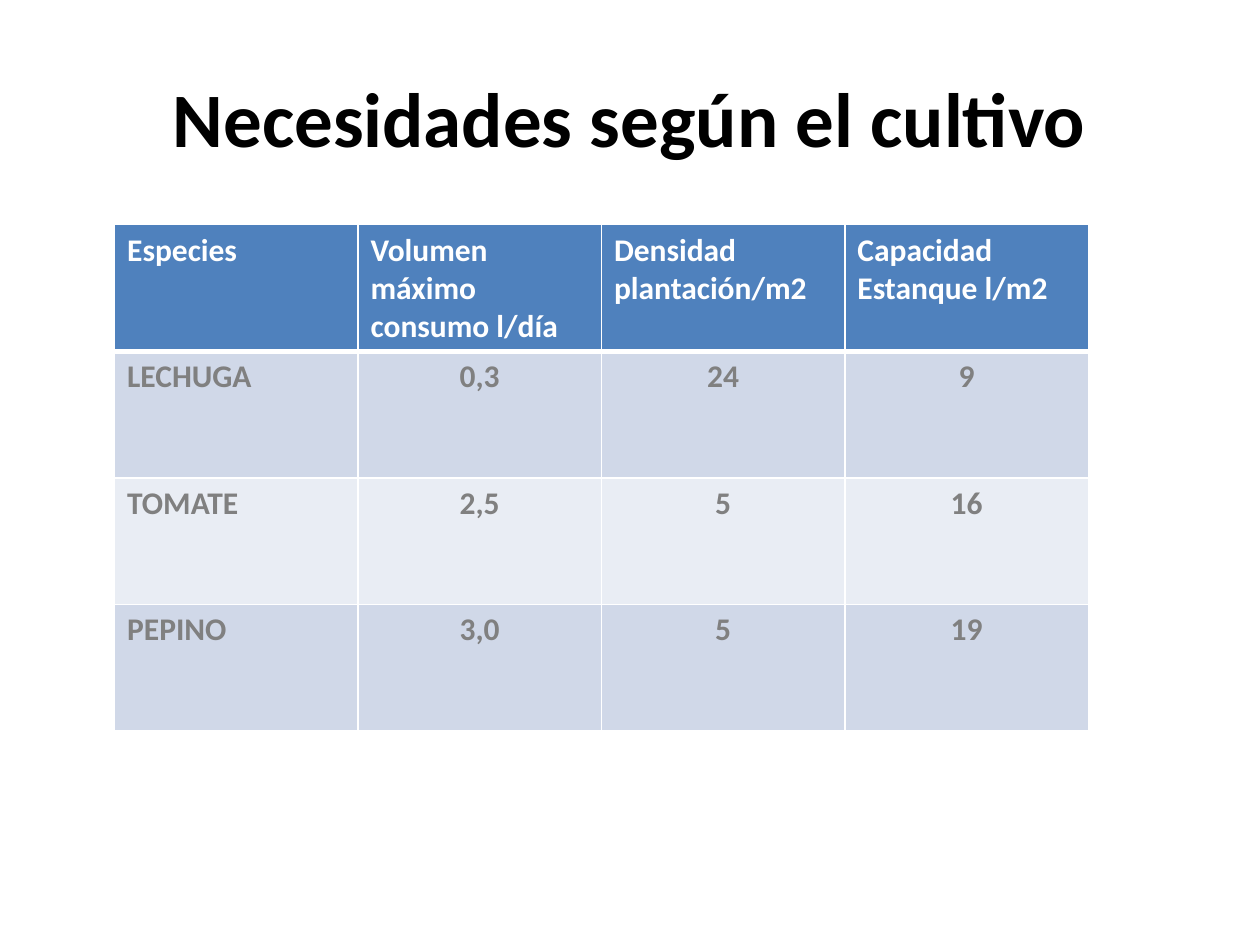
from lxml import etree
from pptx import Presentation, util as u
from pptx.dml.color import RGBColor
from pptx.enum import text
from pptx.oxml import ns

COLORS = {
    "title": "000000",
    "header": "4F81BD",
    "header_text": "FFFFFF",
    "body_text": "808080",
    "odd": "D0D8E8",
    "even": "E9EDF4",
    "border": "FFFFFF",
}
TITLE_FORMAT = {"name": "Calibri", "size": u.Pt(44), "bold": True}
CELL_FORMAT = {"name": "Calibri", "size": u.Pt(18), "bold": True}
ROWS = [
    ["Especies", "Volumen máximo consumo l/día", "Densidad plantación/m2", "Capacidad Estanque l/m2"],
    ["LECHUGA", "0,3", "24", "9"],
    ["TOMATE", "2,5", "5", "16"],
    ["PEPINO", "3,0", "5", "19"],
]


def write(tf, content, fmt, color, align):
    p = tf.paragraphs[0]
    p.alignment = align
    r = p.add_run()
    r.text = content
    for name, value in fmt.items():
        setattr(r.font, name, value)
    r.font.color.rgb = RGBColor.from_string(COLORS[color])


def set_borders(cell, widths):
    tc_pr = cell._tc.get_or_add_tcPr()
    for side, width in widths.items():
        ln = etree.SubElement(tc_pr, ns.qn(f"a:ln{side}"), w=str(u.Pt(width)))
        fill = etree.SubElement(ln, ns.qn("a:solidFill"))
        etree.SubElement(fill, ns.qn("a:srgbClr"), val=COLORS["border"])


def add_title(s, left, top, width, height):
    sp = s.shapes.add_textbox(left, top, width, height)
    tf = sp.text_frame
    tf.word_wrap = True
    tf.vertical_anchor = text.MSO_ANCHOR.MIDDLE
    write(tf, "Necesidades según el cultivo", TITLE_FORMAT, "title", text.PP_ALIGN.CENTER)


def add_crop_table(s, left, top, width, height):
    table = s.shapes.add_table(len(ROWS), len(ROWS[0]), left, top, width, height).table
    for i, row in enumerate(ROWS):
        header = i == 0
        fill = "header" if header else "odd" if i % 2 else "even"
        color = "header_text" if header else "body_text"
        for j, content in enumerate(row):
            cell = table.cell(i, j)
            set_borders(cell, {"L": 1, "R": 1, "T": 3 if i == 1 else 1, "B": 3 if header else 1})
            cell.fill.solid()
            cell.fill.fore_color.rgb = RGBColor.from_string(COLORS[fill])
            align = text.PP_ALIGN.LEFT if header or j == 0 else text.PP_ALIGN.CENTER
            write(cell.text_frame, content, CELL_FORMAT, color, align)


def main():
    prs = Presentation()
    prs.slide_width, prs.slide_height = u.Cm(25.4), u.Cm(19.05)
    s = prs.slides.add_slide(prs.slide_layouts[6])
    add_title(s, u.Cm(1.27), u.Cm(0.76), u.Cm(22.86), u.Cm(3.18))
    add_crop_table(s, u.Cm(2.31), u.Cm(4.53), u.Cm(19.63), u.Cm(10.21))
    prs.save("out.pptx")


if __name__ == "__main__":
    main()
